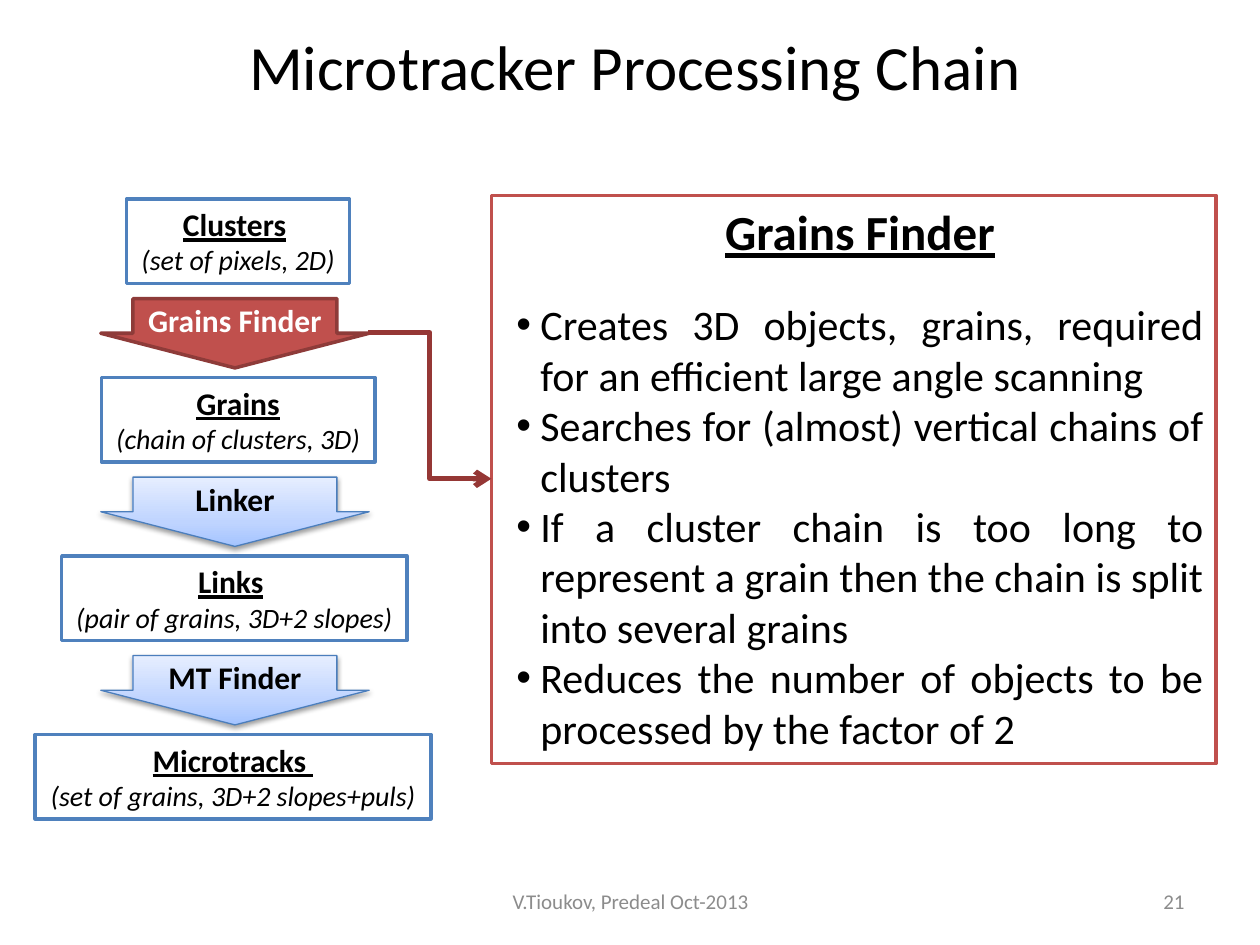
import dataclasses
import lxml.etree
import pptx
import pptx.dml.color
import pptx.enum.shapes
import pptx.enum.text
import pptx.oxml
import pptx.oxml.ns
import pptx.util

SHAPE = pptx.enum.shapes.MSO_SHAPE
ALIGN = pptx.enum.text.PP_ALIGN
ANCHOR = pptx.enum.text.MSO_ANCHOR
COLUMNS, ROWS = 100, 75
WIDTH, HEIGHT = pptx.util.Inches(10), pptx.util.Inches(7.5)
NAMESPACE = pptx.oxml.ns.nsdecls("a")


@dataclasses.dataclass(frozen=True)
class Theme:
    font: str = "Calibri"
    ink: str = "000000"
    paper: str = "FFFFFF"
    muted: str = "8C8C8C"
    blue: str = "4F81BD"
    arrow_edge: str = "4B7EBC"
    red: str = "C0504D"
    red_edge: str = "8E3B39"
    link: str = "953735"
    gradient: tuple = ((0, "A4C4FF"), (35, "BFD4FF"), (100, "E6EEFF"))
    title: int = 36
    heading: int = 28
    body: int = 24
    label: int = 18
    detail: int = 16
    footer: int = 12


THEME = Theme()


def grid(column, row):
    return round(WIDTH * column / COLUMNS), round(HEIGHT * row / ROWS)


def color(value):
    return pptx.dml.color.RGBColor.from_string(value)


def add_span(para, text, size, ink=THEME.ink, **style):
    span = para.add_run()
    span.text = text
    font = span.font
    font.name, font.size = THEME.font, pptx.util.Pt(size)
    font.color.rgb = color(ink)
    for name, value in style.items():
        setattr(font, name, value)


def add_shape(page, kind, box, fill, edge, weight):
    shape = page.shapes.add_shape(kind, *grid(*box[:2]), *grid(*box[2:]))
    shape.shadow.inherit = False
    shape.fill.solid()
    shape.fill.fore_color.rgb = color(fill)
    shape.line.color.rgb = color(edge)
    shape.line.width = pptx.util.Pt(weight)
    return shape


def add_text(page, box, text, size, ink, align):
    shape = page.shapes.add_textbox(*grid(*box[:2]), *grid(*box[2:]))
    frame = shape.text_frame
    frame.word_wrap, frame.vertical_anchor = True, ANCHOR.MIDDLE
    para = frame.paragraphs[0]
    para.alignment = align
    add_span(para, text, size, ink)


def add_stage(page, box, name, gap, detail):
    """Framed data stage; gap is the plain space that follows its name."""
    shape = add_shape(page, SHAPE.RECTANGLE, box, THEME.paper, THEME.blue, 2)
    frame = shape.text_frame
    frame.word_wrap, frame.vertical_anchor = False, ANCHOR.TOP
    heading, note = frame.paragraphs[0], frame.add_paragraph()
    heading.alignment = note.alignment = ALIGN.CENTER
    add_span(heading, name, THEME.label, bold=True, underline=True)
    if gap:
        add_span(heading, gap, THEME.label)
    add_span(note, detail, THEME.detail, italic=True)


def add_glow(arrow):
    """Give an arrow its blue gradient and soft shadow."""
    properties = arrow.fill._xPr
    stops = "".join(
        f'<a:gs pos="{share * 1000}"><a:srgbClr val="{value}"/></a:gs>'
        for share, value in THEME.gradient)
    gradient = pptx.oxml.parse_xml(
        f'<a:gradFill {NAMESPACE} rotWithShape="1"><a:gsLst>{stops}</a:gsLst>'
        '<a:lin ang="16200000" scaled="0"/></a:gradFill>')
    properties.replace(properties.find(pptx.oxml.ns.qn("a:solidFill")), gradient)
    properties.find(pptx.oxml.ns.qn("a:effectLst")).append(pptx.oxml.parse_xml(
        f'<a:outerShdw {NAMESPACE} blurRad="39370" dist="20320" dir="5400000" '
        f'rotWithShape="0"><a:srgbClr val="{THEME.ink}">'
        '<a:alpha val="38000"/></a:srgbClr></a:outerShdw>'))


def add_step(page, box, name, active):
    look = ((THEME.red, THEME.red_edge, 2) if active
            else (THEME.paper, THEME.arrow_edge, 0.75))
    arrow = add_shape(page, SHAPE.DOWN_ARROW, box, *look)
    arrow.adjustments[0], arrow.adjustments[1] = 0.76, 0.5
    if not active:
        add_glow(arrow)
    frame = arrow.text_frame
    frame.word_wrap, frame.vertical_anchor = True, ANCHOR.MIDDLE
    para = frame.paragraphs[0]
    para.alignment = ALIGN.CENTER
    add_span(para, name, THEME.label, THEME.paper if active else THEME.ink,
             bold=True)


def add_chain(page, box, stages, steps):
    """Stages and steps alternate down the box at one fixed pitch."""
    left, top, width, height = box
    stage_height, step_height, step_width = 6.7, 5.5, 21.3
    pitch = (height - stage_height) / (len(stages) - 1)
    for index, (center, stage_width, *words) in enumerate(stages):
        add_stage(page, (left + center - stage_width / 2, top + index * pitch,
                         stage_width, stage_height), *words)
    for index, name in enumerate(steps):
        add_step(page, (left + (width - step_width) / 2,
                        top + 7.9 + index * pitch, step_width, step_height),
                 name, active=index == 0)


def add_bullet(para):
    properties = para._p.get_or_add_pPr()
    properties.set("marL", str(pptx.util.Inches(0.29)))
    properties.set("indent", str(pptx.util.Inches(-0.19)))
    properties.append(pptx.oxml.parse_xml(
        f'<a:buFont {NAMESPACE} typeface="Arial"/>'))
    properties.append(pptx.oxml.parse_xml(f'<a:buChar {NAMESPACE} char="•"/>'))


def add_panel(page, box, heading, points):
    shape = add_shape(page, SHAPE.RECTANGLE, box, THEME.paper, THEME.red, 2)
    frame = shape.text_frame
    frame.word_wrap, frame.vertical_anchor = True, ANCHOR.TOP
    para = frame.paragraphs[0]
    para.alignment = ALIGN.CENTER
    properties = para._p.get_or_add_pPr()
    properties.set("marL", str(pptx.util.Inches(0.29)))
    properties.set("indent", str(pptx.util.Inches(-0.19)))
    add_span(para, heading, THEME.heading, bold=True, underline=True)
    for index, point in enumerate(points):
        para = frame.add_paragraph()
        para.alignment = ALIGN.JUSTIFY
        if index == 0:
            para.space_before = pptx.util.Pt(22)
        add_bullet(para)
        add_span(para, point, THEME.body)


def add_link(page, start, end):
    link = page.shapes.add_connector(
        pptx.enum.shapes.MSO_CONNECTOR.ELBOW, *grid(*start), *grid(*end))
    link.line.color.rgb = color(THEME.link)
    link.line.width = pptx.util.Pt(3)
    line = link.line._get_or_add_ln()
    line.append(pptx.oxml.parse_xml(f'<a:tailEnd {NAMESPACE} type="arrow"/>'))
    line.getparent().append(pptx.oxml.parse_xml(f"<a:effectLst {NAMESPACE}/>"))


def main():
    deck = pptx.Presentation()
    deck.slide_width, deck.slide_height = WIDTH, HEIGHT
    page = deck.slides.add_slide(deck.slide_layouts[6])
    add_text(page, (17.7, -0.3, 65.4, 10.9), "Microtracker Processing Chain",
             THEME.title, THEME.ink, ALIGN.CENTER)
    add_chain(page, (2.8, 15.8, 31.7, 49.2), [
        (16.1, 17.7, "Clusters", " ", "(set of pixels, 2D)"),
        (16.1, 21.7, "Grains", "", "(chain of clusters, 3D)"),
        (15.8, 27.4, "Links", " ", "(pair of grains, 3D+2 slopes)"),
        (15.7, 31.4, "Microtracks ", "", "(set of grains, 3D+2 slopes+puls)"),
    ], ["Grains Finder", "Linker", "MT Finder"])
    add_panel(page, (39, 15.5, 57.5, 45.1), "Grains Finder", [
        "Creates 3D objects, grains, required for an efficient large angle "
        "scanning",
        "Searches for (almost) vertical chains of clusters",
        "If a cluster chain is too long to represent a grain then the chain "
        "is split into several grains",
        "Reduces the number of objects to be processed by the factor of 2",
    ])
    add_link(page, (29.2, 26.4), (39, 38))
    add_text(page, (71.7, 69.5, 23.3, 4), "21", THEME.footer, THEME.muted,
             ALIGN.RIGHT)
    add_text(page, (34.2, 69.5, 31.7, 4), "V.Tioukov, Predeal Oct-2013",
             THEME.footer, THEME.muted, ALIGN.CENTER)
    deck.save("out.pptx")


if __name__ == "__main__":
    main()
